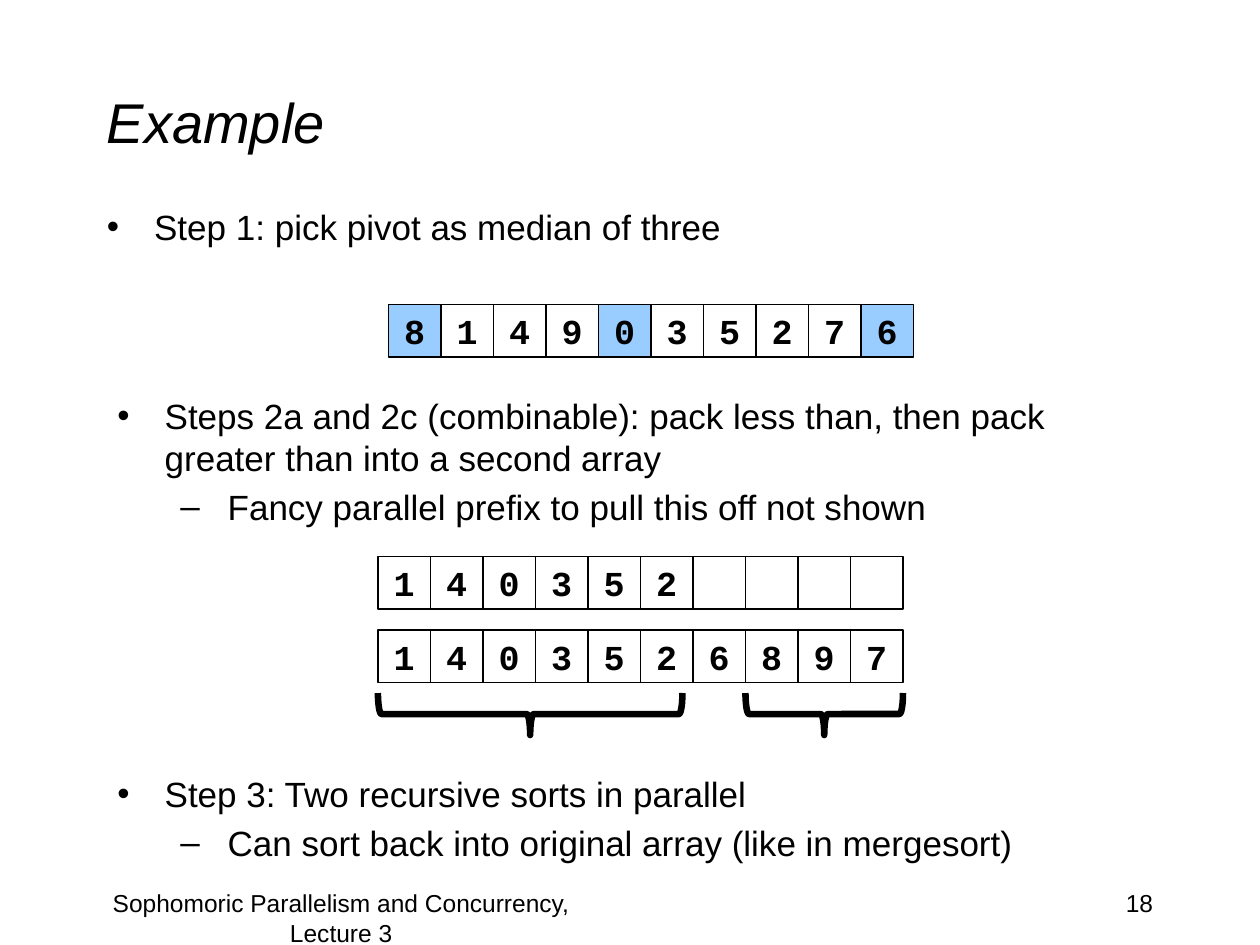
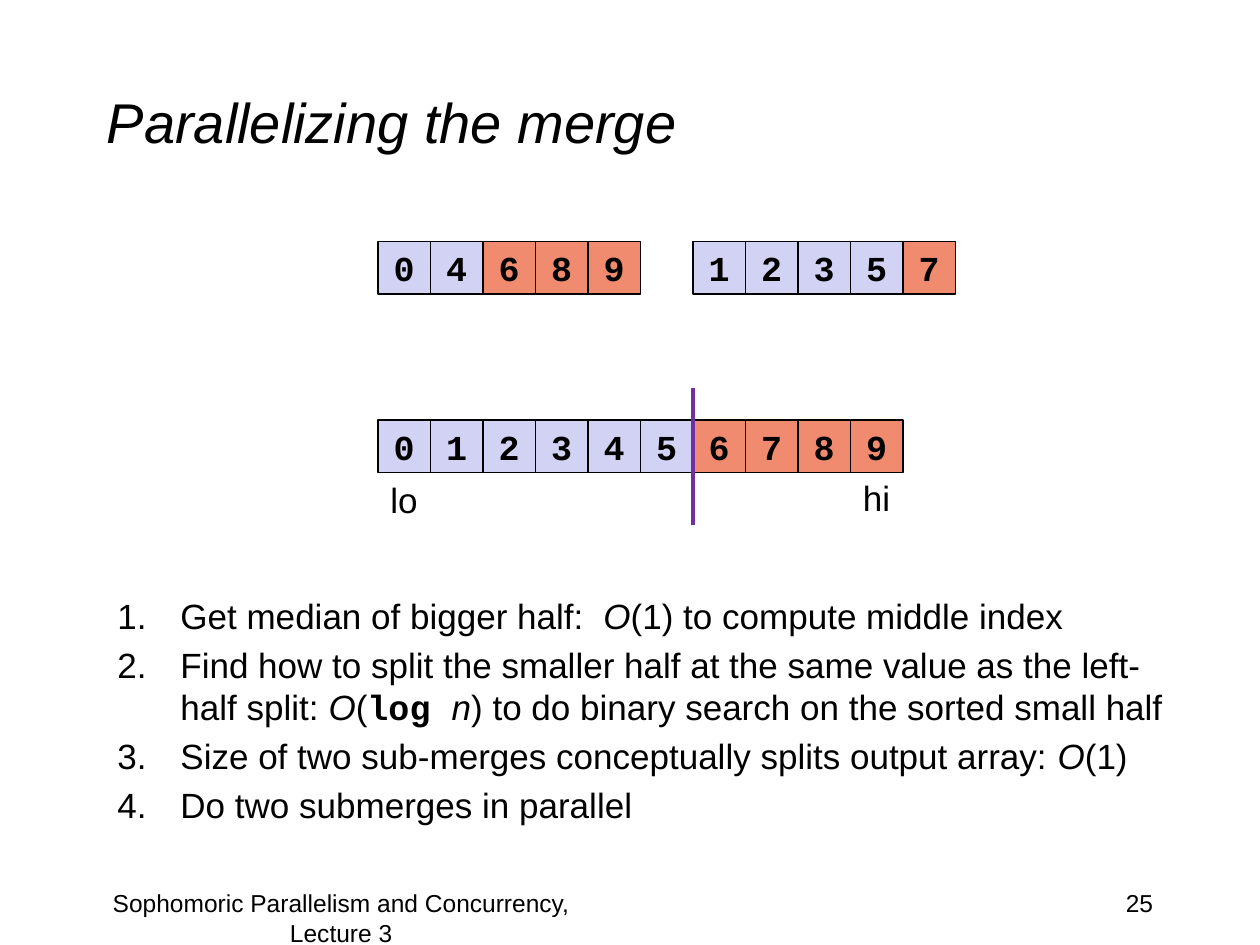
from dataclasses import dataclass

from lxml.etree import SubElement
from pptx import Presentation
from pptx.dml.color import RGBColor
from pptx.enum.shapes import MSO_CONNECTOR, MSO_SHAPE
from pptx.enum.text import MSO_ANCHOR, PP_ALIGN
from pptx.oxml.ns import qn
from pptx.shapes.autoshape import Shape
from pptx.slide import Slide
from pptx.text.text import TextFrame
from pptx.util import Emu, Pt

EMU_PER_PX = 9525
CELL = 40
COLORS = {
    "ink": "000000",
    "candidate": "99CCFF",
    "low": "D2D2F4",
    "high": "F18B6F",
    "split": "7030A0",
}
BODY_FONT = "Arial"
CODE_FONT = "Courier New"
BODY_SIZE = 20
FOOTER = "Sophomoric Parallelism and Concurrency, Lecture 3"


@dataclass(frozen=True)
class Box:
    left: int
    top: int
    width: int
    height: int

    def emu(self) -> tuple[Emu, ...]:
        return tuple(px(n) for n in (self.left, self.top, self.width, self.height))


@dataclass(frozen=True)
class Run:
    text: str
    italic: bool = False
    bold: bool = False
    font: str = BODY_FONT


@dataclass(frozen=True)
class ListStyle:
    level: int
    indent: int
    hanging: int
    tag: str
    attributes: tuple[str, str]


@dataclass(frozen=True)
class Item:
    style: ListStyle
    runs: tuple[Run, ...]


@dataclass(frozen=True)
class ArrayRow:
    """A row of cells; fills holds one colour name per cell, or nothing."""
    left: int
    top: int
    values: str
    fills: tuple[str | None, ...] = ()


BULLET = ListStyle(0, 36, 36, "a:buChar", ("char", "•"))
DASH = ListStyle(1, 84, 36, "a:buChar", ("char", "–"))
NUMBER = ListStyle(0, 48, 48, "a:buAutoNum", ("type", "arabicPeriod"))
BIG_O = Run("O", italic=True)


def px(length: int) -> Emu:
    return Emu(length * EMU_PER_PX)


def color(name: str) -> RGBColor:
    return RGBColor.from_string(COLORS[name])


def item(style: ListStyle, *parts: str | Run) -> Item:
    return Item(style, tuple(Run(p) if isinstance(p, str) else p for p in parts))


def write_text(frame: TextFrame, *runs: Run, size: int = BODY_SIZE,
               align: PP_ALIGN = PP_ALIGN.LEFT, anchor: MSO_ANCHOR = MSO_ANCHOR.TOP,
               wrap: bool = True, style: ListStyle | None = None,
               new_paragraph: bool = False) -> None:
    frame.word_wrap = wrap
    frame.vertical_anchor = anchor
    paragraph = frame.add_paragraph() if new_paragraph else frame.paragraphs[0]
    paragraph.alignment = align
    if style:
        apply_list_style(paragraph, style)
    for part in runs:
        run = paragraph.add_run()
        run.text = part.text
        run.font.name = part.font
        run.font.size = Pt(size)
        run.font.bold = part.bold
        run.font.italic = part.italic
        run.font.color.rgb = color("ink")


def apply_list_style(paragraph, style: ListStyle) -> None:
    paragraph.level = style.level
    paragraph.space_before = Pt(BODY_SIZE * 0.2)
    properties = paragraph._p.get_or_add_pPr()
    properties.set("marL", str(px(style.indent)))
    properties.set("indent", str(-px(style.hanging)))
    font = SubElement(properties, qn("a:buFont"))
    font.set("typeface", BODY_FONT)
    SubElement(properties, qn(style.tag)).set(*style.attributes)


def add_text(slide: Slide, box: Box, *runs: Run, **text_format) -> None:
    write_text(slide.shapes.add_textbox(*box.emu()).text_frame, *runs, **text_format)


def add_list(slide: Slide, box: Box, *items: Item) -> None:
    frame = slide.shapes.add_textbox(*box.emu()).text_frame
    for index, entry in enumerate(items):
        write_text(frame, *entry.runs, style=entry.style, new_paragraph=index > 0)


def add_outline(slide: Slide, kind: MSO_SHAPE, box: Box, line_width: float,
                fill: str | None = None) -> Shape:
    shape = slide.shapes.add_shape(kind, *box.emu())
    shape.shadow.inherit = False
    shape.line.color.rgb = color("ink")
    shape.line.width = Pt(line_width)
    if fill:
        shape.fill.solid()
        shape.fill.fore_color.rgb = color(fill)
    else:
        shape.fill.background()
    return shape


def add_array(slide: Slide, row: ArrayRow) -> None:
    fills = row.fills or (None,) * len(row.values)
    for index, (value, fill) in enumerate(zip(row.values, fills)):
        box = Box(row.left + index * CELL, row.top, CELL, CELL)
        cell = add_outline(slide, MSO_SHAPE.RECTANGLE, box, 0.75, fill)
        if value != " ":
            write_text(cell.text_frame, Run(value, bold=True, font=CODE_FONT),
                       align=PP_ALIGN.CENTER, anchor=MSO_ANCHOR.MIDDLE, wrap=False)


def add_brace_below(slide: Slide, left: int, width: int, top: int) -> None:
    """Turn a left brace so that its tip points down, spanning left to left + width."""
    depth = 32
    box = Box(left + (width - depth) // 2, top + (depth - width) // 2, depth, width)
    add_outline(slide, MSO_SHAPE.LEFT_BRACE, box, 3.75).rotation = 270


def add_split_line(slide: Slide, x: int, top: int, bottom: int) -> None:
    line = slide.shapes.add_connector(
        MSO_CONNECTOR.STRAIGHT, px(x), px(top), px(x), px(bottom))
    line.line.color.rgb = color("split")
    line.line.width = Pt(2.25)
    SubElement(line._element.spPr, qn("a:effectLst"))


def add_base_slide(presentation, title: str, number: int) -> Slide:
    slide = presentation.slides.add_slide(presentation.slide_layouts[6])
    add_text(slide, Box(72, 32, 816, 120), Run(title, italic=True),
             size=32, anchor=MSO_ANCHOR.MIDDLE)
    add_text(slide, Box(688, 672, 200, 48), Run(str(number)),
             size=14, align=PP_ALIGN.RIGHT)
    add_text(slide, Box(48, 672, 424, 48), Run(FOOTER),
             size=14, align=PP_ALIGN.CENTER)
    return slide


def build_example(presentation) -> None:
    slide = add_base_slide(presentation, "Example", 18)
    add_list(slide, Box(72, 152, 816, 48),
             item(BULLET, "Step 1: pick pivot as median of three"))
    add_list(slide, Box(80, 296, 816, 112),
             item(BULLET, "Steps 2a and 2c (combinable): pack less than, "
                          "then pack greater than into a second array"),
             item(DASH, "Fancy parallel prefix to pull this off not shown"))
    add_list(slide, Box(80, 584, 816, 80),
             item(BULLET, "Step 3: Two recursive sorts in parallel"),
             item(DASH, "Can sort back into original array (like in mergesort)"))

    values = "8149035276"
    pivots = tuple("candidate" if value in "806" else None for value in values)
    for row in (ArrayRow(296, 232, values, pivots),
                ArrayRow(288, 424, "140352    "),
                ArrayRow(288, 480, "1403526897")):
        add_array(slide, row)
    add_brace_below(slide, 288, 232, 528)
    add_brace_below(slide, 568, 120, 528)


def build_merge(presentation) -> None:
    slide = add_base_slide(presentation, "Parallelizing the merge", 25)
    for left, top, values in ((288, 184, "04689"), (528, 184, "12357"),
                              (288, 320, "0123456789")):
        halves = tuple("low" if value < "6" else "high" for value in values)
        add_array(slide, ArrayRow(left, top, values, halves))
    add_text(slide, Box(288, 360, CELL, 42), Run("lo"), wrap=False)
    add_text(slide, Box(648, 358, CELL, 42), Run("hi"), wrap=False)
    add_split_line(slide, 528, 296, 400)
    add_list(
        slide, Box(80, 448, 832, 184),
        item(NUMBER, "Get median of bigger half:  ", BIG_O,
             "(1) to compute middle index"),
        item(NUMBER, "Find how to split the smaller half at the same value "
                     "as the left-half split: ", BIG_O, "(",
             Run("log ", bold=True, font=CODE_FONT), Run("n", italic=True),
             ") to do binary search on the sorted small half"),
        item(NUMBER, "Size of two sub-merges conceptually splits output array: ",
             BIG_O, "(1)"),
        item(NUMBER, "Do two submerges in parallel"))


def main() -> None:
    presentation = Presentation()
    presentation.slide_width = px(960)
    presentation.slide_height = px(720)
    build_example(presentation)
    build_merge(presentation)
    presentation.save("out.pptx")


if __name__ == "__main__":
    main()
